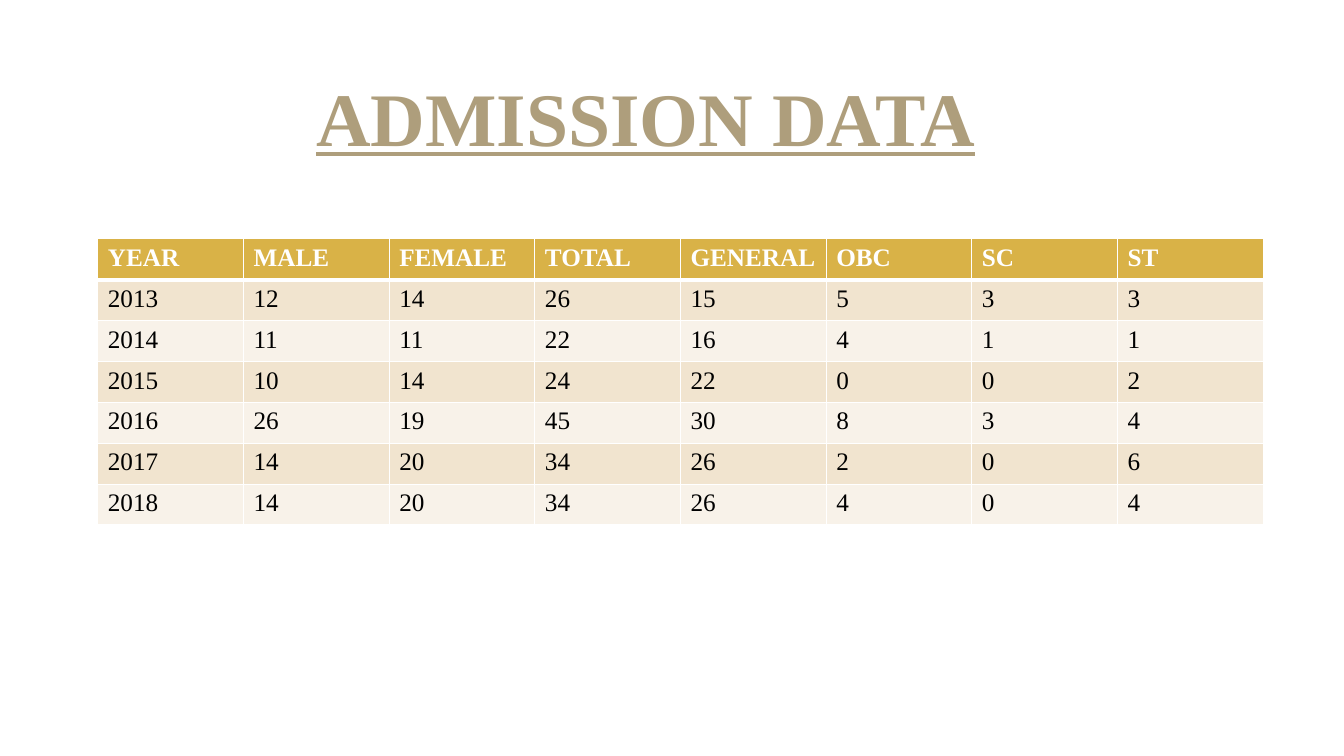
from lxml.etree import SubElement
from pptx import Presentation
from pptx.dml.color import RGBColor
from pptx.enum.text import MSO_AUTO_SIZE, PP_ALIGN
from pptx.oxml.ns import qn
from pptx.util import Inches, Pt

# Content
TITLE = "ADMISSION DATA"
HEADERS = ["YEAR", "MALE", "FEMALE", "TOTAL", "GENERAL", "OBC", "SC", "ST"]
ADMISSIONS = [
    (2013, 12, 14, 26, 15, 5, 3, 3),
    (2014, 11, 11, 22, 16, 4, 1, 1),
    (2015, 10, 14, 24, 22, 0, 0, 2),
    (2016, 26, 19, 45, 30, 8, 3, 4),
    (2017, 14, 20, 34, 26, 2, 0, 6),
    (2018, 14, 20, 34, 26, 4, 0, 4),
]

# Style
FONT = "Times New Roman"
COLORS = {
    "title": "AE9E7C",
    "header": "D9B247",
    "odd": "F1E4CF",
    "even": "F8F2E9",
    "white": "FFFFFF",
    "black": "000000",
}

# Layout, in inches
TITLE_BOX = (3, 0.65, 6.81, 1.01)
TABLE_LEFT, TABLE_TOP = 0.97, 2.37
TABLE_WIDTH, TABLE_HEIGHT = 11.56, 2.84


def style_font(font, size, color, bold):
    font.name = FONT
    font.size = Pt(size)
    font.bold = bold
    font.color.rgb = RGBColor.from_string(COLORS[color])


def add_borders(cell, top, bottom):
    properties = cell._tc.get_or_add_tcPr()
    for side, width in (("L", 1), ("R", 1), ("T", top), ("B", bottom)):
        line = SubElement(properties, qn(f"a:ln{side}"), w=str(Pt(width)))
        fill = SubElement(line, qn("a:solidFill"))
        SubElement(fill, qn("a:srgbClr"), val=COLORS["white"])


def add_title(page):
    box = page.shapes.add_textbox(*map(Inches, TITLE_BOX))
    frame = box.text_frame
    frame.text = TITLE
    frame.word_wrap = False
    frame.auto_size = MSO_AUTO_SIZE.SHAPE_TO_FIT_TEXT
    para = frame.paragraphs[0]
    para.alignment = PP_ALIGN.CENTER
    span = para.runs[0]
    style_font(span.font, 54, "title", True)
    span.font.underline = True


def add_admission_table(page):
    rows = [HEADERS, *ADMISSIONS]
    area = map(Inches, (TABLE_LEFT, TABLE_TOP, TABLE_WIDTH, TABLE_HEIGHT))
    table = page.shapes.add_table(len(rows), len(HEADERS), *area).table
    for row_index, values in enumerate(rows):
        is_header = row_index == 0
        band = "header" if is_header else "odd" if row_index % 2 else "even"
        for column_index, value in enumerate(values):
            cell = table.cell(row_index, column_index)
            cell.text = str(value)
            style_font(cell.text_frame.paragraphs[0].runs[0].font, 18,
                       "white" if is_header else "black", is_header)
            # The rule under the header is heavier than the others
            add_borders(cell, top=3 if row_index == 1 else 1,
                        bottom=3 if is_header else 1)
            cell.fill.solid()
            cell.fill.fore_color.rgb = RGBColor.from_string(COLORS[band])


def main():
    deck = Presentation()
    deck.slide_width, deck.slide_height = Inches(13.33), Inches(7.5)
    page = deck.slides.add_slide(deck.slide_layouts[6])
    add_admission_table(page)
    add_title(page)
    deck.save("out.pptx")


if __name__ == "__main__":
    main()
